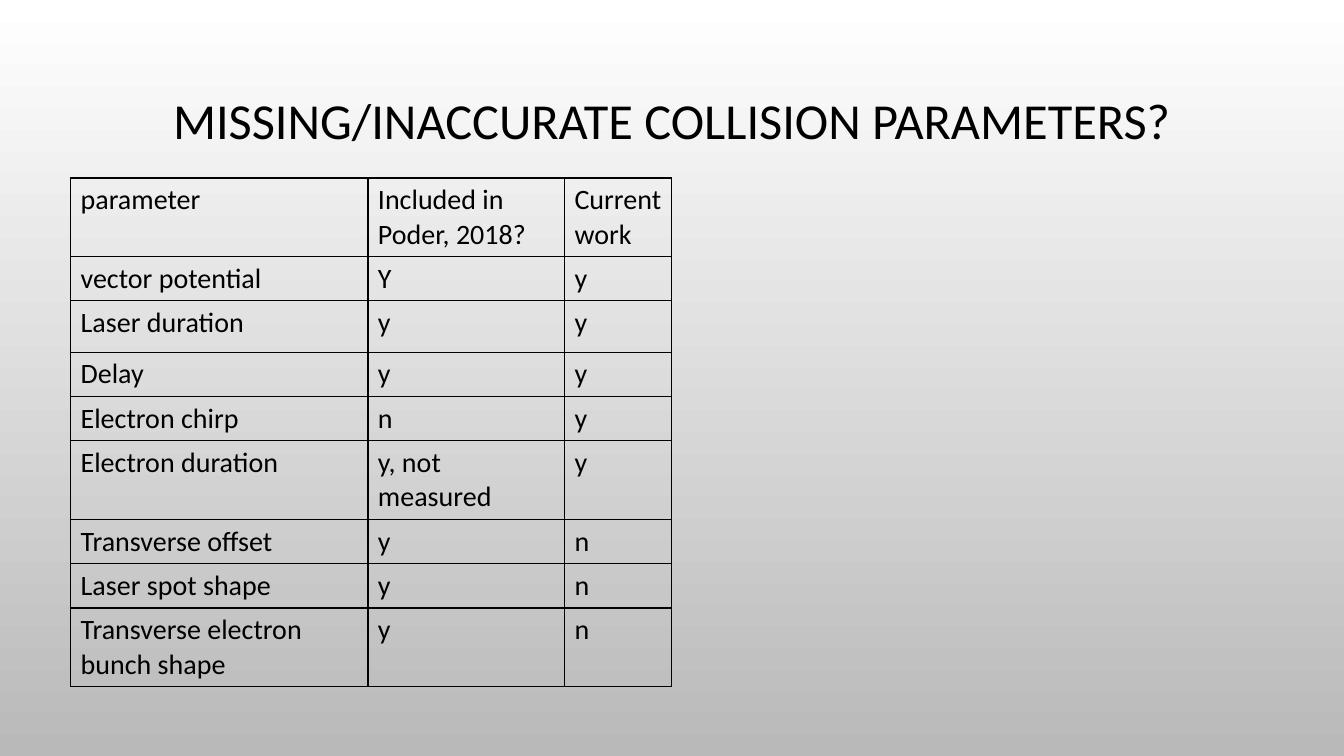
from pptx import Presentation
from pptx.dml.color import RGBColor
from pptx.enum.text import MSO_ANCHOR, PP_ALIGN
from pptx.oxml import parse_xml
from pptx.oxml.ns import nsdecls
from pptx.util import Pt

BLACK = RGBColor(0, 0, 0)
WHITE = RGBColor(255, 255, 255)
GRAY = RGBColor(0xB9, 0xB9, 0xB9)

ROWS = [
    ("parameter", "Included in Poder, 2018?", "Current work"),
    ("vector potential", "Y", "y"),
    ("Laser duration", "y", "y"),
    ("Delay", "y", "y"),
    ("Electron chirp", "n", "y"),
    ("Electron duration", "y, not measured", "y"),
    ("Transverse offset", "y", "n"),
    ("Laser spot shape", "y", "n"),
    ("Transverse electron bunch shape", "y", "n"),
]
WIDTHS = [212.4, 140.4, 76.6]
ONE, TWO = 31.7, 56
HEIGHTS = [TWO, ONE, 36.7, ONE, ONE, TWO, ONE, ONE, TWO]


def set_font(par, size):
    par.font.name = "Calibri"
    par.font.size = Pt(size)
    par.font.color.rgb = BLACK


def add_borders(cell):
    props = cell._tc.get_or_add_tcPr()
    for i, side in enumerate(("lnL", "lnR", "lnT", "lnB")):
        line = parse_xml(
            f'<a:{side} {nsdecls("a")} w="{Pt(1)}"><a:solidFill>'
            f'<a:srgbClr val="{BLACK}"/></a:solidFill></a:{side}>'
        )
        props.insert(i, line)


deck = Presentation()
deck.slide_width, deck.slide_height = Pt(960), Pt(540)
slide = deck.slides.add_slide(deck.slide_layouts[6])

back = slide.background.fill
back.gradient()
back.gradient_angle = 270
for stop, color, place in zip(back.gradient_stops, (WHITE, GRAY), (0, 1)):
    stop.color.rgb = color
    stop.position = place

title = slide.shapes.add_textbox(Pt(72), Pt(49), Pt(816), Pt(78.5))
frame = title.text_frame
frame.word_wrap = True
frame.vertical_anchor = MSO_ANCHOR.MIDDLE
head = frame.paragraphs[0]
head.text = "MISSING/INACCURATE COLLISION PARAMETERS?"
head.alignment = PP_ALIGN.CENTER
head.line_spacing = 0.9
set_font(head, 36)

grid = slide.shapes.add_table(
    len(ROWS), len(WIDTHS), Pt(50.4), Pt(127.2), Pt(sum(WIDTHS)), Pt(sum(HEIGHTS))
).table
grid.first_row = grid.horz_banding = False
for col, width in zip(grid.columns, WIDTHS):
    col.width = Pt(width)
for row, height, texts in zip(grid.rows, HEIGHTS, ROWS):
    row.height = Pt(height)
    for cell, text in zip(row.cells, texts):
        cell.text = text
        cell.fill.background()
        add_borders(cell)
        set_font(cell.text_frame.paragraphs[0], 20)

deck.save("out.pptx")
